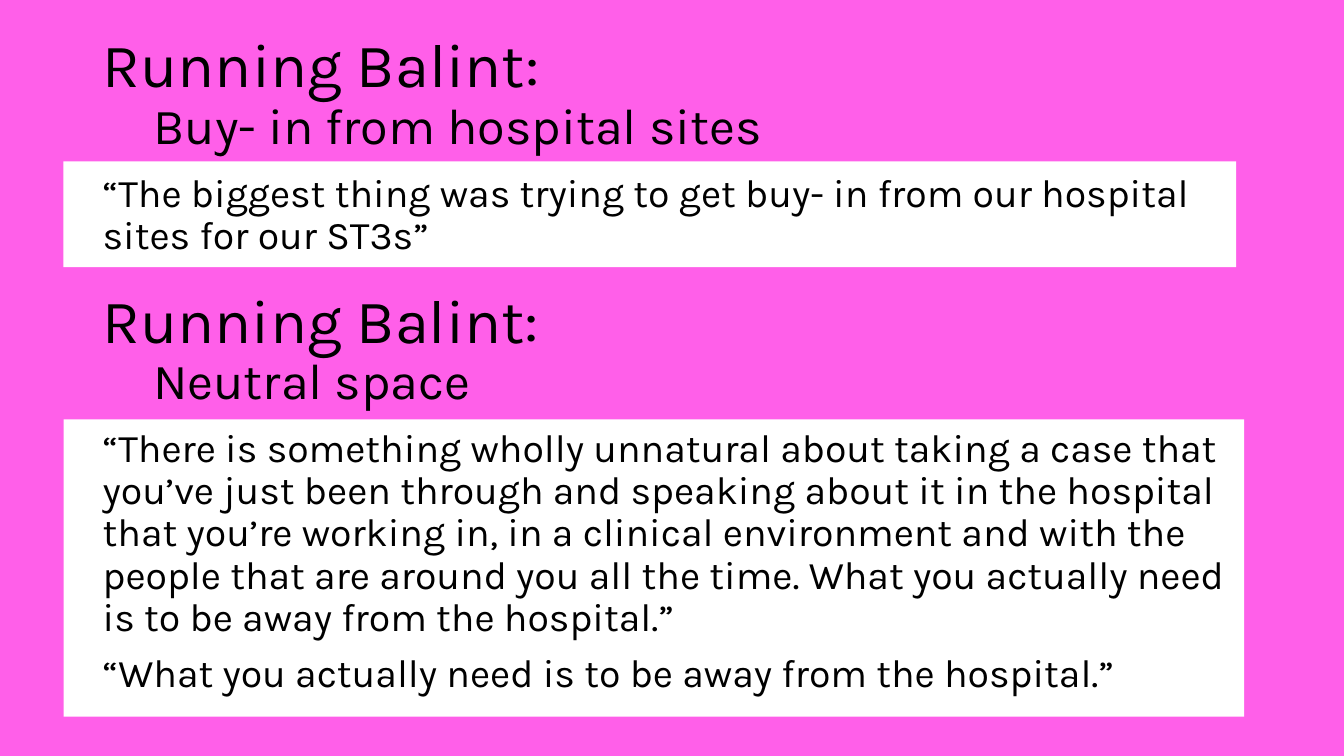
from pptx import Presentation
from pptx.dml.color import RGBColor
from pptx.enum.shapes import MSO_SHAPE
from pptx.enum.text import MSO_ANCHOR, MSO_AUTO_SIZE, PP_ALIGN
from pptx.util import Inches, Pt

FONT, PINK, WHITE, BLACK = "Karla", "FF5FE9", "FFFFFF", "000000"
LEFT, WIDTH = 0.92, 11.5
HEAD = "Running Balint:"

# Each part: subheading, heading top, panel (top, width, height), quote (top, height), quotes
PARTS = [
    ("Buy- in from hospital sites", 0.22, (1.6, 11.63, 1.05), (1.67, 1.05), [
        "“The biggest thing was trying to get buy- in from our hospital sites for our ST3s”",
    ]),
    ("Neutral space", 2.75, (4.16, 11.71, 2.95), (4.2, 2.9), [
        "“There is something wholly unnatural about taking a case that you’ve just been "
        "through and speaking about it in the hospital that you’re working in, in a "
        "clinical environment and with the people that are around you all the time. "
        "What you actually need is to be away from the hospital.”",
        "“What you actually need is to be away from the hospital.”",
    ]),
]


def color(code):
    return RGBColor.from_string(code)


def write(box, lines, sizes, gap=0, anchor=MSO_ANCHOR.TOP):
    frame = box.text_frame
    frame.word_wrap = True
    frame.auto_size = MSO_AUTO_SIZE.NONE
    frame.vertical_anchor = anchor
    for i, (line, size) in enumerate(zip(lines, sizes)):
        para = frame.paragraphs[0] if i == 0 else frame.add_paragraph()
        para.alignment = PP_ALIGN.LEFT
        para.line_spacing = 0.9
        para.space_before = Pt(gap if i else 0)
        run = para.add_run()
        run.text = line
        run.font.name = FONT
        run.font.size = Pt(size)
        run.font.color.rgb = color(BLACK)


def panel(slide, top, width, height):
    rect = slide.shapes.add_shape(
        MSO_SHAPE.RECTANGLE, Inches(0.63), Inches(top), Inches(width), Inches(height))
    rect.shadow.inherit = False
    rect.fill.solid()
    rect.fill.fore_color.rgb = color(WHITE)
    rect.line.fill.background()


def place(box, top, height):
    box.left, box.top = Inches(LEFT), Inches(top)
    box.width, box.height = Inches(WIDTH), Inches(height)
    return box


def main():
    deck = Presentation()
    deck.slide_width, deck.slide_height = Inches(13.33), Inches(7.5)
    slide = deck.slides.add_slide(deck.slide_layouts[5])
    slide.background.fill.solid()
    slide.background.fill.fore_color.rgb = color(PINK)

    def text_box():
        return slide.shapes.add_textbox(0, 0, 0, 0)

    for i, (sub, top, area, (y, height), quotes) in enumerate(PARTS):
        panel(slide, *area)
        head = text_box() if i else slide.shapes.title
        write(place(head, top, 1.45), [HEAD, "\t" + sub], [44, 36],
              anchor=MSO_ANCHOR.MIDDLE)
        write(place(text_box(), y, height), quotes, [28] * len(quotes), gap=10)

    deck.save("out.pptx")


if __name__ == "__main__":
    main()
